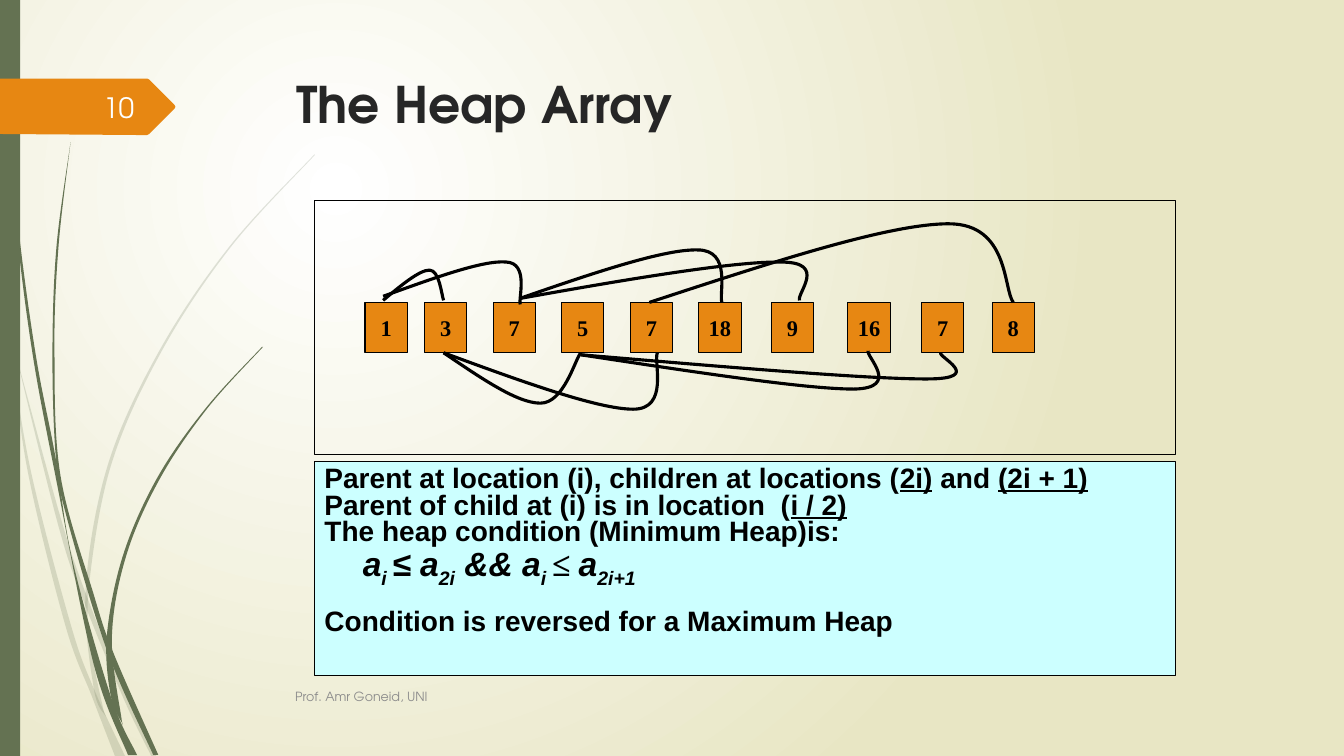
import pptx
import pptx.util
import pptx.dml.color
import pptx.enum.shapes
import pptx.enum.text
import pptx.oxml
import pptx.oxml.ns

Inches = pptx.util.Inches
Pt = pptx.util.Pt
ALIGN = pptx.enum.text.PP_ALIGN
ANCHOR = pptx.enum.text.MSO_ANCHOR
RECTANGLE = pptx.enum.shapes.MSO_SHAPE.RECTANGLE
DRAWING = pptx.oxml.ns.nsdecls("a")

GREEN, ORANGE, BLACK = "647252", "E78712", "000000"
HEADING_FONT = "TeX Gyre Adventor"

FADED_BLADES = [
    ([(0, 2.82), (0.11, 3.5), (0.31, 4.69), (0.7, 6.19), (0.93, 6.83), (1.24, 7.5)],
     [(1.14, 7.5), (0.92, 6.93), (0.65, 6.21), (0.28, 4.7), (0.1, 3.44), (0, 2.99)]),
    ([(0.14, 3.45), (0.58, 5.22), (0.84, 5.99), (1.23, 6.94), (1.5, 7.5)],
     [(1.55, 7.5), (1.27, 6.92), (0.92, 6.07), (0.62, 5.2), (0.14, 3.45)]),
    ([(3.12, 1.53), (2.28, 2.44), (1.58, 3.48), (1.07, 4.61), (0.85, 5.84), (0.93, 6.83),
      (1.05, 7.11)],
     [(1.03, 7.06), (0.91, 6.46), (0.88, 5.84), (1.1, 4.62), (1.6, 3.49), (2.29, 2.45),
      (3.12, 1.54)]),
]
SOLID_BLADES = [
    ([(0.03, 0), (0.07, 1.1), (0.17, 2.33), (0.33, 3.55), (0.56, 4.77), (0.93, 6.59),
      (1.27, 7.49)],
     [(1.36, 7.49), (1.1, 6.91), (0.72, 5.56), (0.55, 4.53), (0.36, 3.55), (0.19, 2.32),
      (0.08, 1.09), (0.04, 0)]),
    ([(0.7, 1.41), (0.56, 2.45), (0.52, 3.49), (0.55, 4.49), (0.64, 5.05), (1.06, 6.45),
      (1.52, 7.49)],
     [(1.57, 7.49), (1.13, 6.49), (0.93, 5.9), (0.6, 4.72), (0.54, 3.49), (0.58, 2.45),
      (0.7, 1.41)]),
    ([(2.6, 3.44), (2.04, 4.05), (1.56, 4.74), (1.22, 5.51), (1.06, 6.31), (1.1, 6.91),
      (1.22, 7.19)],
     [(1.21, 7.16), (1.11, 6.33), (1.25, 5.52), (1.58, 4.76), (2.05, 4.06), (2.61, 3.44)]),
]
PAGE_TAG = [(0, 0.78), (1.46, 0.78), (1.48, 0.79), (1.73, 1.04), (1.74, 1.06), (1.73, 1.08),
            (1.48, 1.33), (1.46, 1.34), (1.36, 1.34), (0, 1.33)]
HEAP = [(3.62, 1), (4.21, 3), (4.89, 7), (5.57, 5), (6.25, 7),
        (6.93, 18), (7.65, 9), (8.41, 16), (9.14, 7), (9.84, 8)]
CHILD_LINKS = [
    [(3.8, 2.98), (3.98, 2.83), (4.16, 2.68), (4.26, 2.68), (4.36, 2.68), (4.38, 2.93), (4.4, 2.98)],
    [(3.8, 2.94), (4.3, 2.76), (4.79, 2.58), (5.02, 2.6), (5.25, 2.61), (5.14, 2.96), (5.16, 3.02)],
    [(4.4, 3.5), (4.77, 3.75), (5.13, 4), (5.36, 4), (5.59, 4), (5.7, 3.58), (5.76, 3.5)],
    [(4.4, 3.5), (5.16, 3.78), (5.93, 4.06), (6.28, 4.06), (6.64, 4.06), (6.48, 3.59), (6.52, 3.5)],
    [(5.16, 2.96), (5.88, 2.71), (6.59, 2.47), (6.92, 2.48), (7.26, 2.48), (7.13, 2.91), (7.16, 3)],
    [(5.16, 2.96), (6.22, 2.77), (7.29, 2.59), (7.75, 2.6), (8.21, 2.6), (7.9, 2.91), (7.93, 2.98)],
    [(5.76, 3.52), (6.88, 3.69), (7.99, 3.86), (8.47, 3.86), (8.94, 3.85), (8.59, 3.54), (8.61, 3.48)],
    [(5.76, 3.52), (7.18, 3.64), (8.59, 3.76), (9.19, 3.76), (9.78, 3.76), (9.3, 3.54), (9.33, 3.5)],
    [(6.44, 3), (7.63, 2.61), (8.81, 2.22), (9.41, 2.22), (10.01, 2.22), (9.95, 2.87), (10.05, 3)],
]
UNDER, FORMULA = {"underline": True}, {"size": 24, "italic": True}
SUB = {**FORMULA, "baseline": -25000}
RULES = [
    [("Parent at location (i), children at locations (", {}), ("2i)", UNDER),
     (" and ", {}), ("(2i + 1)", UNDER)],
    [("Parent of child at (i) is in location  (", {}), ("i / 2)", UNDER)],
    [("The heap condition (Minimum Heap)is:", {})],
    [("a", FORMULA), ("i ", SUB), ("≤ a", FORMULA), ("2i", SUB), (" && a", FORMULA),
     ("i ", SUB), ("≤ ", {**FORMULA, "font": "Times New Roman"}), ("a", FORMULA), ("2i+1", SUB)],
    [("Condition is reversed for a Maximum Heap", {})],
]


def rgb(value):
    return pptx.dml.color.RGBColor.from_string(value)


def paint(shape, fill=None, line=None, width=0.75, alpha=None):
    shape.shadow.inherit = False
    if fill:
        shape.fill.solid()
        shape.fill.fore_color.rgb = rgb(fill)
        if alpha:
            color = next(shape.element.spPr.iter(pptx.oxml.ns.qn("a:srgbClr")))
            color.append(pptx.oxml.parse_xml(f'<a:alpha {DRAWING} val="{alpha * 1000}"/>'))
    else:
        shape.fill.background()
    if line:
        shape.line.color.rgb = rgb(line)
        shape.line.width = Pt(width)
    else:
        shape.line.fill.background()


def style(run, size, font, color, bold=False, italic=False):
    run.font.size = Pt(size)
    run.font.name = font
    run.font.color.rgb = rgb(color)
    run.font.bold = bold
    run.font.italic = italic


def add_box(slide, left, top, width, height, fill=None, line=None):
    box = slide.shapes.add_shape(RECTANGLE, Inches(left), Inches(top), Inches(width), Inches(height))
    paint(box, fill, line)
    return box


def add_label(slide, area, text, size, color, bold=False, align=ALIGN.LEFT, anchor=ANCHOR.MIDDLE):
    frame = slide.shapes.add_textbox(*map(Inches, area)).text_frame
    frame.word_wrap = True
    frame.vertical_anchor = anchor
    frame.text = text
    frame.paragraphs[0].alignment = align
    style(frame.paragraphs[0].runs[0], size, HEADING_FONT, color, bold)


def add_outline(slide, points, close=True, **look):
    corners = [(Inches(x), Inches(y)) for x, y in points]
    builder = slide.shapes.build_freeform(*corners[0])
    builder.add_line_segments(corners[1:], close=close)
    outline = builder.convert_to_shape()
    paint(outline, **look)
    return outline


def add_curve(slide, points, close=True, **look):
    outline = add_outline(slide, points, close, **look)
    steps = list(outline.element.iter(pptx.oxml.ns.qn("a:lnTo")))
    for first, second, third in zip(steps[::3], steps[1::3], steps[2::3]):
        cubic = pptx.oxml.parse_xml(f"<a:cubicBezTo {DRAWING}/>")
        first.addprevious(cubic)
        for step in (first, second, third):
            cubic.append(step[0])
            step.getparent().remove(step)


def smooth_edge(anchors):
    padded = [anchors[0], *anchors, anchors[-1]]
    points = [anchors[0]]
    for before, start, end, after in zip(padded, padded[1:], padded[2:], padded[3:]):
        leave = [s + (e - b) / 6 for b, s, e in zip(before, start, end)]
        arrive = [e - (a - s) / 6 for s, e, a in zip(start, end, after)]
        points += [leave, arrive, end]
    return points


def add_blades(slide, blades, alpha=None):
    for near, far in blades:
        points = [*smooth_edge(near), near[-1], far[0], *smooth_edge(far)]
        add_curve(slide, points, fill=GREEN, alpha=alpha)


def set_background(slide):
    fill = slide.background.fill
    fill.gradient()
    for stop, color, position in zip(fill.gradient_stops, ("FFFFFF", "E8E6C4"), (0, 1)):
        stop.color.rgb = rgb(color)
        stop.position = position
    gradient = next(slide.element.iter(pptx.oxml.ns.qn("a:gradFill")))
    linear = gradient.find(pptx.oxml.ns.qn("a:lin"))
    gradient.replace(linear, pptx.oxml.parse_xml(
        f'<a:path {DRAWING} path="circle">'
        '<a:fillToRect l="50000" t="50000" r="100000" b="100000"/></a:path>'))


def add_heap_cell(slide, left, value):
    frame = add_box(slide, left, 3, 0.42, 0.5, ORANGE, BLACK).text_frame
    frame.word_wrap = False
    frame.vertical_anchor = ANCHOR.MIDDLE
    frame.text = str(value)
    frame.paragraphs[0].alignment = ALIGN.CENTER
    style(frame.paragraphs[0].runs[0], 16, "Times New Roman", BLACK, True)


def add_rules(slide):
    frame = add_box(slide, 3.12, 4.58, 8.54, 2.12, "CCFFFF", BLACK).text_frame
    frame.word_wrap = True
    frame.vertical_anchor = ANCHOR.TOP
    for index, rule in enumerate(RULES):
        paragraph = frame.add_paragraph() if index else frame.paragraphs[0]
        paragraph.alignment = ALIGN.LEFT
        paragraph.line_spacing = 0.8
        for text, look in rule:
            run = paragraph.add_run()
            run.text = text
            style(run, look.get("size", 20), look.get("font", "Arial"), BLACK, True,
                  look.get("italic", False))
            run.font.underline = look.get("underline", False)
            if "baseline" in look:
                run._r.get_or_add_rPr().set("baseline", str(look["baseline"]))
        if rule[0][1] is FORMULA:
            paragraph._p.get_or_add_pPr().set("marL", str(Inches(0.38)))
    paragraph.space_before = Pt(18.4)


def main():
    deck = pptx.Presentation()
    deck.slide_width, deck.slide_height = Inches(13.33), Inches(7.5)
    slide = deck.slides.add_slide(deck.slide_layouts[6])
    set_background(slide)
    add_blades(slide, FADED_BLADES, alpha=20)
    add_blades(slide, SOLID_BLADES)
    add_box(slide, 0, 0, 0.2, 7.5, GREEN)
    add_outline(slide, PAGE_TAG, fill=ORANGE)
    add_label(slide, (2.84, 0.68, 9.75, 1.4), "The Heap Array", 36, "262626", True, anchor=ANCHOR.TOP)
    add_label(slide, (2.83, 6.71, 8.33, 0.4), "Prof. Amr Goneid, UNI", 9, "8C8C8C")
    add_label(slide, (0.58, 0.86, 0.85, 0.4), "10", 20, "FEFFFF", align=ALIGN.RIGHT)
    add_box(slide, 3.12, 1.99, 8.54, 2.52, line=BLACK)
    for left, value in HEAP:
        add_heap_cell(slide, left, value)
    for link in CHILD_LINKS:
        add_curve(slide, link, close=False, line=BLACK, width=2.25)
    add_rules(slide)
    deck.save("out.pptx")


if __name__ == "__main__":
    main()
